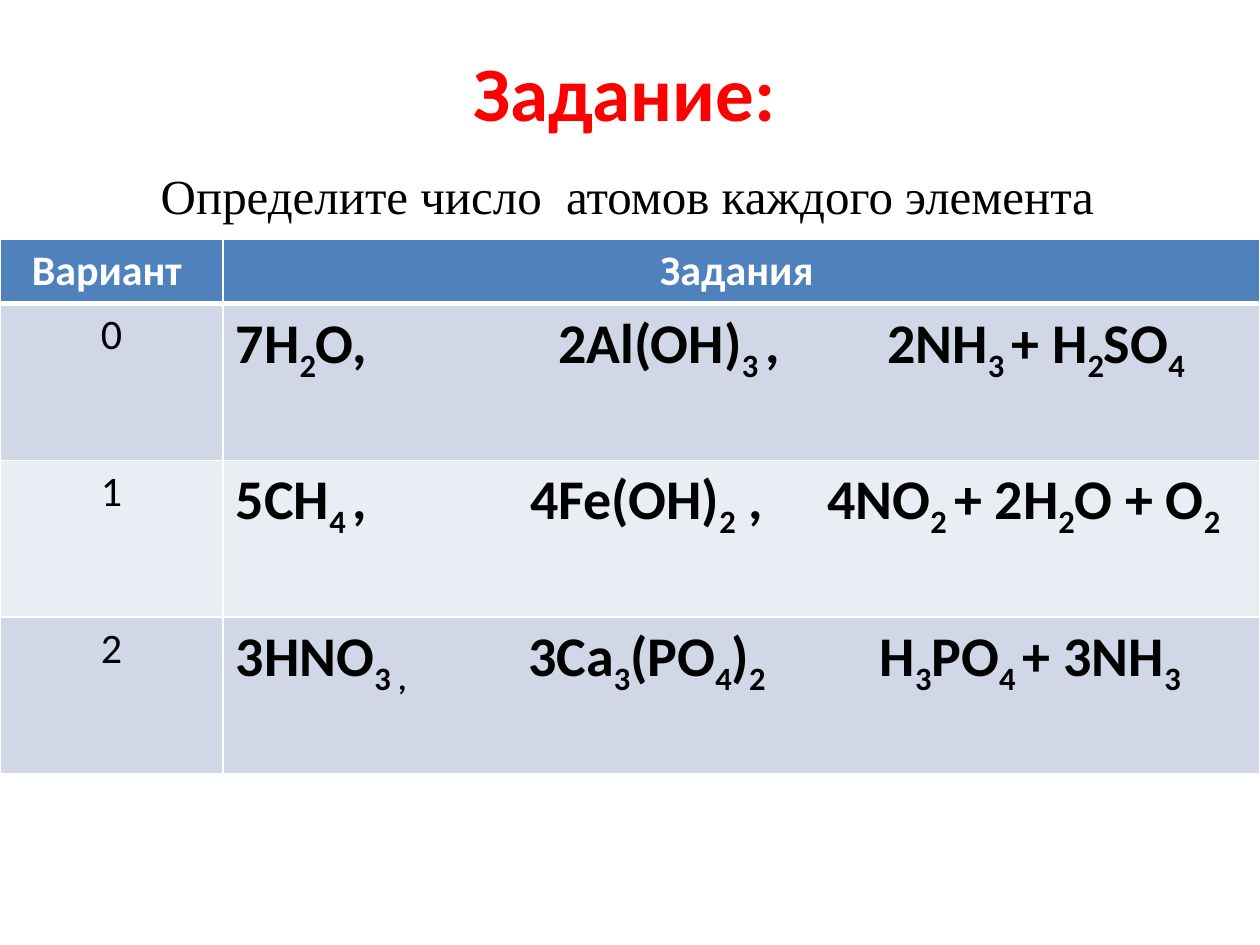
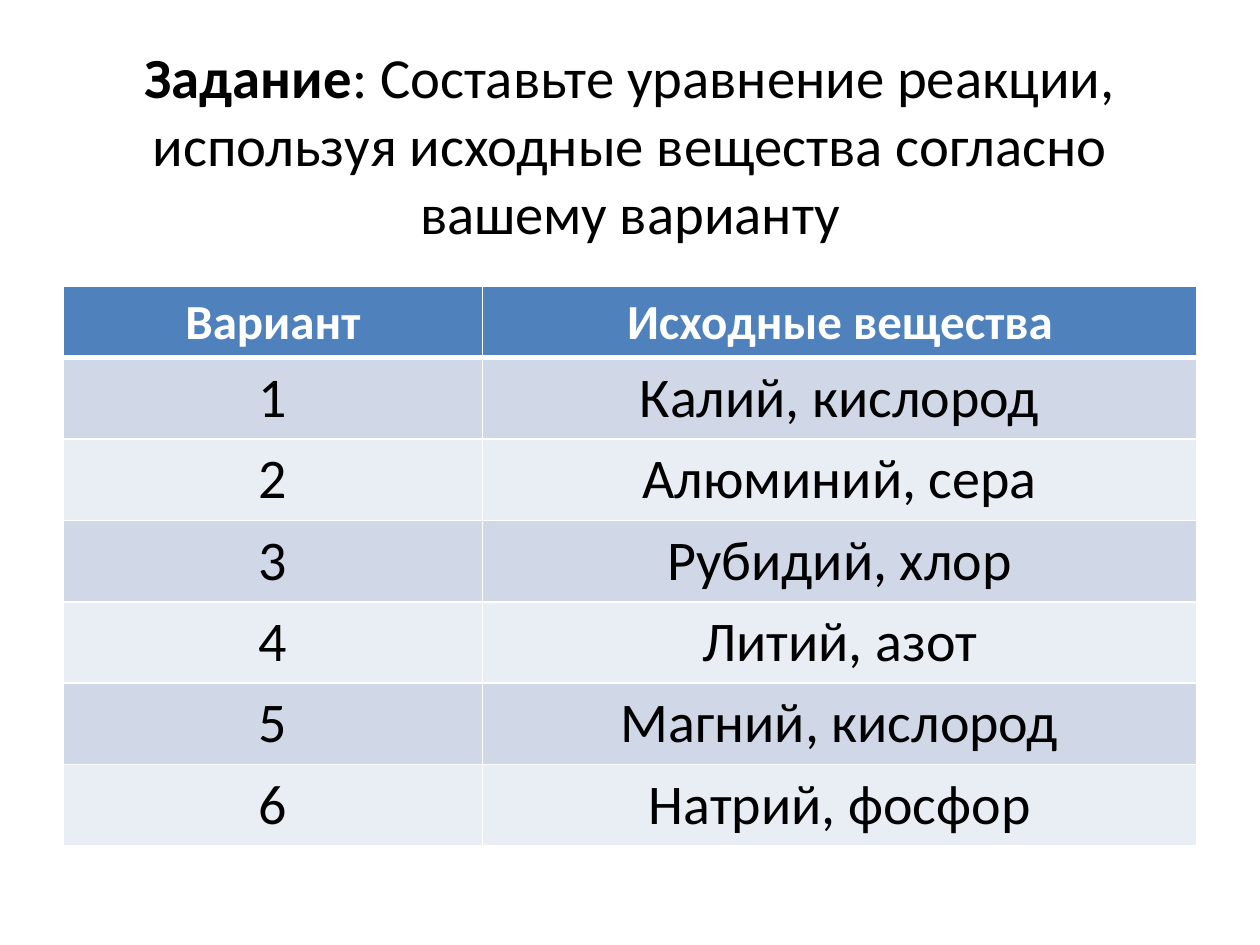
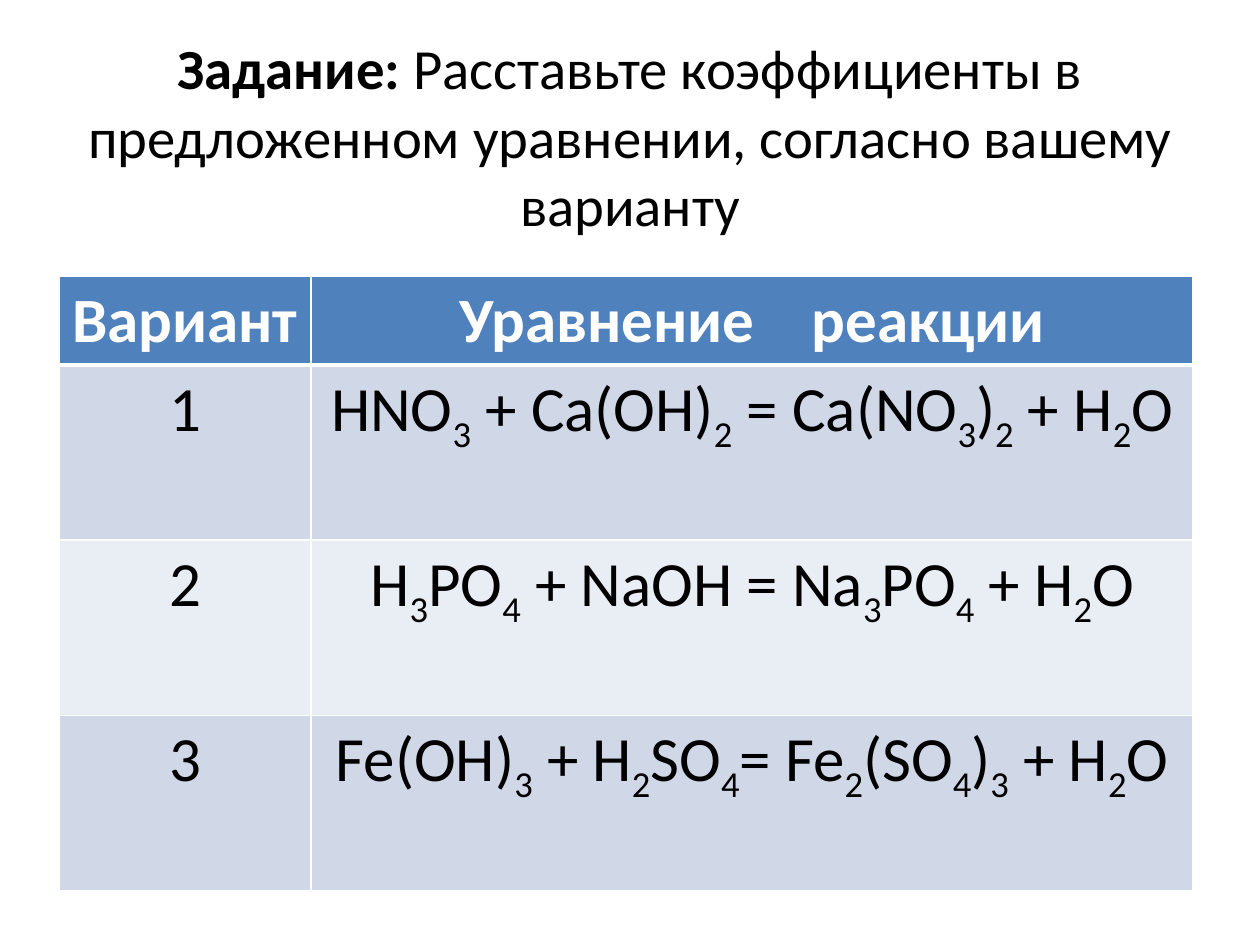
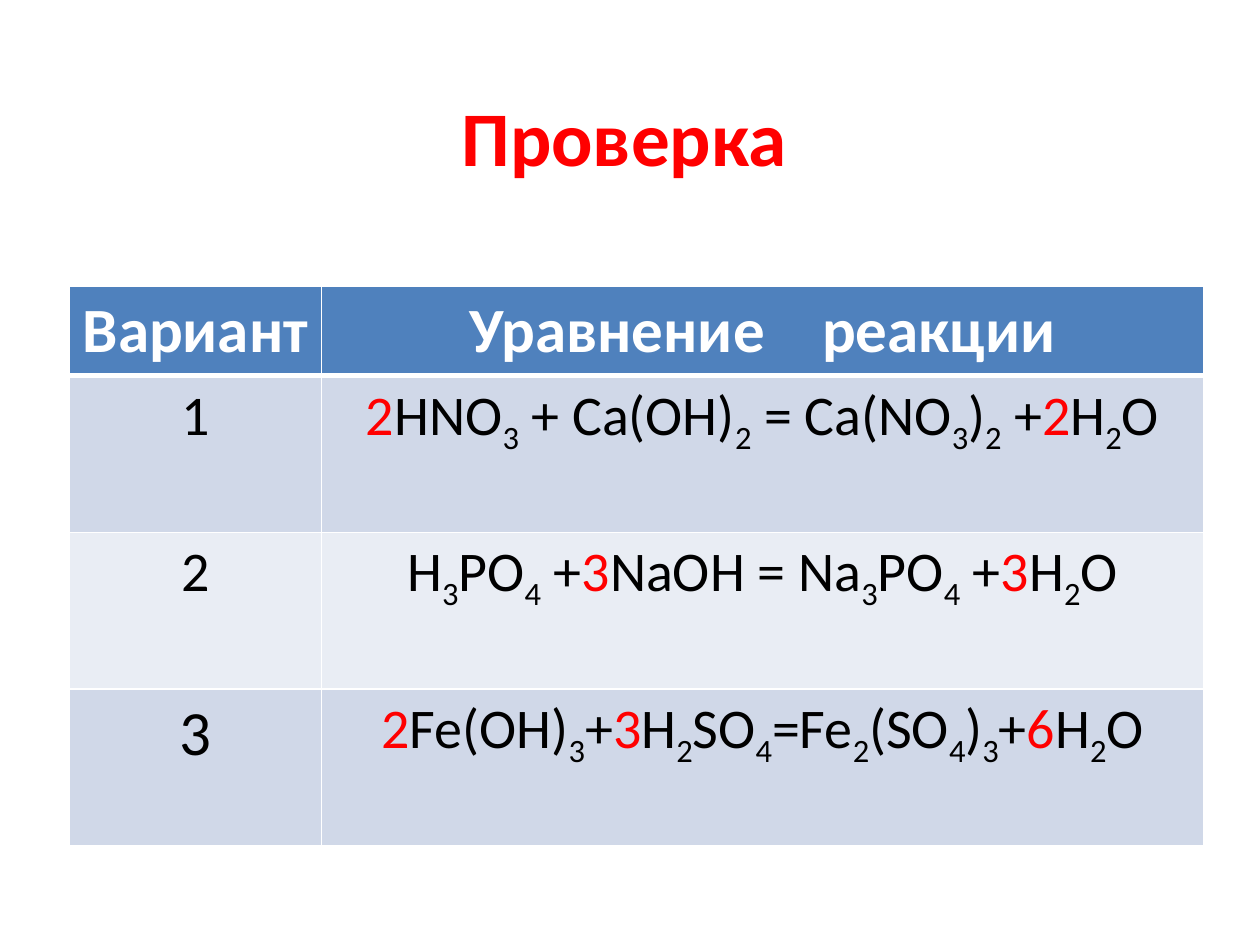
from itertools import groupby

from lxml import etree
from pptx import Presentation
from pptx import util as u
from pptx.dml.color import RGBColor
from pptx.enum import text
from pptx.oxml import ns

BLACK, WHITE, RED = "000000", "FFFFFF", "FF0000"
HEADER = "4F81BD"
BANDS = ["D0D8E8", "E9EDF4"]
BODY_FONT, TASK_FONT = "Calibri", "Times New Roman"
TITLE_SIZE = 32.4


def rgb(value):
    return RGBColor.from_string(value)


def add_xml(parent, tag, index=None, **attributes):
    element = etree.Element(ns.qn(tag), {k: str(v) for k, v in attributes.items()})
    parent.insert(len(parent) if index is None else index, element)
    return element


def marked_pieces(content):
    """Split text by marks: _ lowers, * reddens the next character; | is a wide gap."""
    marks, pending = [], ""
    for char in content:
        if char in "_*":
            pending = char
        elif char == "|":
            marks.append((" ", "|"))
        else:
            marks.append((char, pending))
            pending = ""
    for mark, group in groupby(marks, key=lambda item: item[1]):
        yield "".join(char for char, _ in group), mark


class Deck:
    def __init__(self):
        self.prs = Presentation()
        self.prs.slide_width, self.prs.slide_height = u.Cm(25.4), u.Cm(19.05)
        self.slide = None

    def new_slide(self):
        self.slide = self.prs.slides.add_slide(self.prs.slide_layouts[6])

    def add_runs(self, paragraph, content, size, color=BLACK, bold=False,
                 font=BODY_FONT, gap=0.68):
        for piece, mark in marked_pieces(content):
            run = paragraph.add_run()
            run.text = piece
            run.font.name, run.font.size, run.font.bold = font, u.Pt(size), bold
            run.font.color.rgb = rgb(RED if mark == "*" else color)
            properties = run._r.get_or_add_rPr()
            if mark == "_":
                properties.set("baseline", "-25000")
            elif mark == "|":
                properties.set("spc", str(round(size * gap * 100)))

    def title(self, height, left=1.27, width=22.86):
        box = self.slide.shapes.add_textbox(
            u.Cm(left), u.Cm(0.76), u.Cm(width), u.Cm(height))
        frame = box.text_frame
        frame.word_wrap = True
        frame.vertical_anchor = text.MSO_ANCHOR.MIDDLE
        heading = frame.paragraphs[0]
        heading.alignment = text.PP_ALIGN.CENTER
        return heading

    def cell(self, cell, row, content, size, bold=False, tabs=()):
        is_header = row == 0
        cell.fill.solid()
        cell.fill.fore_color.rgb = rgb(HEADER if is_header else BANDS[(row - 1) % 2])
        # White grid, heavier under the header
        widths = {"L": 1, "R": 1, "T": 3 if row == 1 else 1, "B": 3 if is_header else 1}
        for index, (side, width) in enumerate(widths.items()):
            line = add_xml(cell._tc.get_or_add_tcPr(), f"a:ln{side}", index, w=u.Pt(width))
            add_xml(add_xml(line, "a:solidFill"), "a:srgbClr", val=WHITE)
        paragraph = cell.text_frame.paragraphs[0]
        if tabs:
            stops = add_xml(paragraph._p.get_or_add_pPr(), "a:tabLst")
            for stop in tabs:
                add_xml(stops, "a:tab", pos=u.Cm(stop), algn="l")
        else:
            paragraph.alignment = text.PP_ALIGN.CENTER
        self.add_runs(paragraph, content, size, WHITE if is_header else BLACK,
                      bold or is_header)

    def table(self, left, top, columns, header_height, row_height, header, header_size,
              rows, size, number_sizes=None, bold=False, tabs=None):
        """Rows are (variant, task); tabs holds the stops of each task."""
        heights = [header_height] + [row_height] * len(rows)
        grid = self.slide.shapes.add_table(
            len(heights), len(columns), u.Cm(left), u.Cm(top),
            u.Cm(sum(columns)), u.Cm(sum(heights))).table
        for column, width in zip(grid.columns, columns):
            column.width = u.Cm(width)
        for line, height in zip(grid.rows, heights):
            line.height = u.Cm(height)
        for column, content in enumerate(header):
            self.cell(grid.cell(0, column), 0, content, header_size)
        for row, (variant, task) in enumerate(rows, 1):
            number_size = number_sizes[row - 1] if number_sizes else size
            self.cell(grid.cell(row, 0), row, variant, number_size)
            self.cell(grid.cell(row, 1), row, task, size, bold, tabs[row - 1] if tabs else ())


EQUATION_HEADER = ["Вариант ", "Уравнение|реакции"]
EQUATION_COLUMNS = [5.08, 17.78]


# Slides
def atom_count(deck):
    deck.new_slide()
    deck.table(
        0, 4.83, [4.5, 20.9], 1.27, 3.16, ["Вариант ", "Задания "], 24,
        [("0", "7H_2O,\t2Al(OH)_3_ ,\t2NH_3_ + H_2SO_4"),
         ("1", "5СН_4_ ,\t4Fe(OH)_2 ,\t4NO_2_ + 2H_2O + O_2"),
         ("2", "3HNO_3_ _,\t3Ca_3(PO_4)_2\tH_3PO_4_ + 3NH_3")],
        32, number_sizes=[24] * 3, bold=True,
        tabs=[(6.5, 13.13), (5.94, 11.92), (5.89, 12.98)])
    heading = deck.title(4.01, left=1.19, width=22.81)
    deck.add_runs(heading, "Задание:", 44, RED, True)
    heading.add_line_break()
    deck.add_runs(heading, " ", 44, RED, True)
    deck.add_runs(heading, "Определите число|атомов каждого элемента ", 28,
                  font=TASK_FONT, gap=0.25)


def starting_substances(deck):
    deck.new_slide()
    heading = deck.title(4.27)
    deck.add_runs(heading, "Задание", TITLE_SIZE, bold=True)
    deck.add_runs(heading, ": Составьте уравнение реакции, используя исходные "
                           "вещества согласно вашему варианту", TITLE_SIZE)
    substances = ["Калий, кислород", "Алюминий, сера", "Рубидий, хлор",
                  "Литий, азот", "Магний, кислород", "Натрий, фосфор"]
    deck.table(1.27, 5.77, [8.46, 14.4], 1.44, 1.64, ["Вариант", "Исходные вещества"], 28,
               [(str(n), pair) for n, pair in enumerate(substances, 1)], 32)


def coefficients(deck):
    deck.new_slide()
    heading = deck.title(3.94)
    deck.add_runs(heading, "Задание:", TITLE_SIZE, bold=True)
    deck.add_runs(heading, " Расставьте коэффициенты в предложенном уравнении, "
                           "согласно вашему варианту", TITLE_SIZE)
    deck.table(
        1.19, 5.56, EQUATION_COLUMNS, 1.8, 3.53, EQUATION_HEADER, 36,
        [("1", "HNO_3 + Ca(OH)_2 = Ca(NO_3)_2 + H_2O"),
         ("2", "H_3PO_4 + NaOH = Na_3PO_4 + H_2O"),
         ("3", "Fe(OH)_3 + H_2SO_4= Fe_2(SO_4)_3 + H_2O")], 36)


def answers(deck):
    deck.new_slide()
    heading = deck.title(3.94)
    deck.add_runs(heading, "Проверка", 44.1, RED, True)
    deck.add_runs(heading, " ", 28.8, RED, True)
    deck.table(
        1.4, 5.77, EQUATION_COLUMNS, 1.8, 3.16, EQUATION_HEADER, 36,
        [("1", "*2HNO_3 + Ca(OH)_2 = Ca(NO_3)_2 +*2H_2O"),
         ("2", "H_3PO_4 +*3NaOH = Na_3PO_4 +*3H_2O"),
         ("3", "*2Fe(OH)_3+*3H_2SO_4=Fe_2(SO_4)_3+*6H_2O")],
        32, number_sizes=[32, 32, 36])


def main():
    deck = Deck()
    for build in (atom_count, starting_substances, coefficients, answers):
        build(deck)
    deck.prs.save("out.pptx")


if __name__ == "__main__":
    main()
